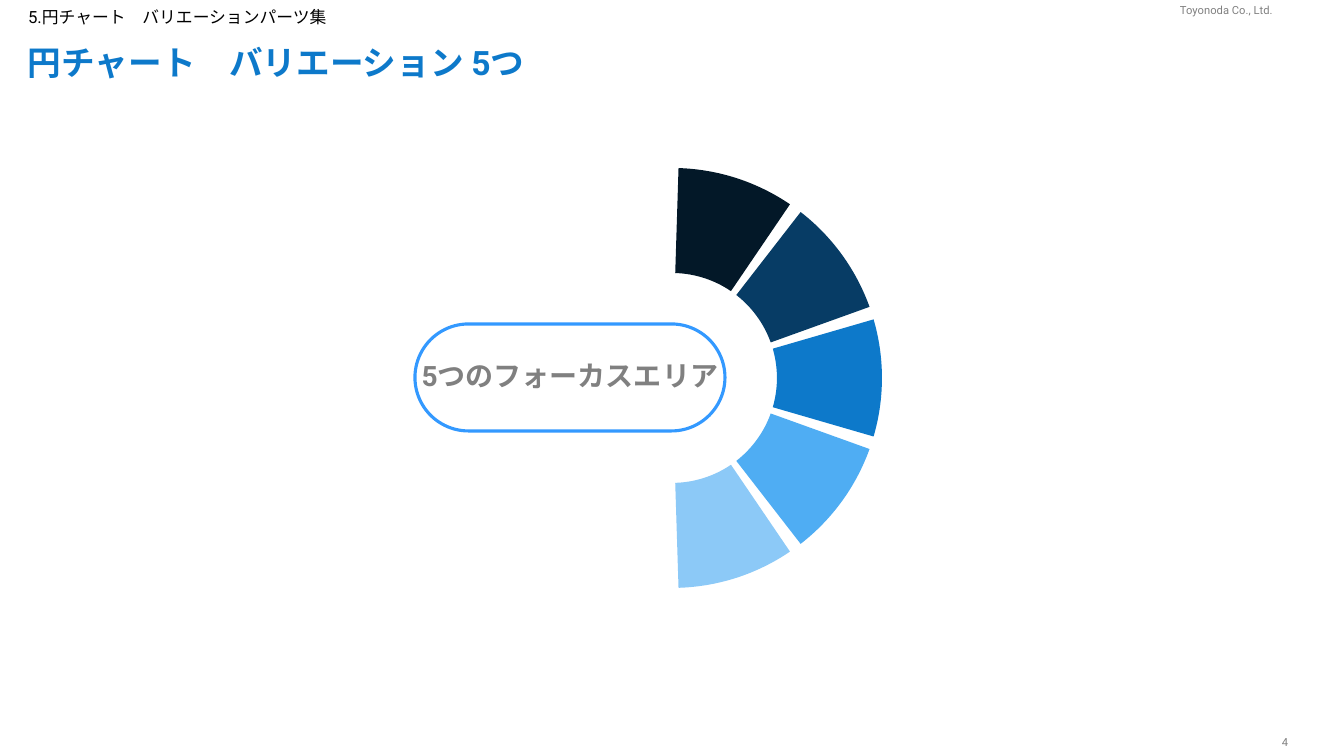
from dataclasses import dataclass

from pptx import Presentation
from pptx.chart.data import CategoryChartData
from pptx.chart.point import Point
from pptx.dml.color import RGBColor as RGB
from pptx.enum.chart import XL_CHART_TYPE as CHART
from pptx.enum.shapes import MSO_SHAPE as SHAPE
from pptx.enum.text import MSO_ANCHOR as ANCHOR, PP_ALIGN as ALIGN
from pptx.oxml import parse_xml
from pptx.oxml.ns import nsdecls
from pptx.util import Pt

EMU_PER_PX = 12192000 / 1344


@dataclass(frozen=True)
class Theme:
    """Colours, font and type sizes of the slide."""
    font: str = "Roboto"
    black: str = "000000"
    white: str = "FFFFFF"
    grey: str = "808080"
    accent: str = "0D79CA"
    outline: str = "3399FF"
    slices: tuple = ("031828", "073C65", "0D79CA", "4FADF3", "8CC9F7")
    title: int = 24
    focus: int = 20
    section: int = 12
    chart: int = 10
    small: int = 8


THEME = Theme()


def px(*lengths):
    """Turn pixel lengths into EMU."""
    return [round(n * EMU_PER_PX) for n in lengths]


def set_text(sp, text, size, color, bold=False, align=ALIGN.LEFT,
             anchor=ANCHOR.MIDDLE, pad=0, wrap=True, spacing=None):
    """Write one styled paragraph into a shape."""
    tf = sp.text_frame
    tf.text = text
    tf.word_wrap = wrap
    tf.vertical_anchor = anchor
    tf.margin_left = tf.margin_right = 0
    tf.margin_top = tf.margin_bottom = px(pad)[0]
    p = tf.paragraphs[0]
    p.alignment = align
    p.line_spacing = spacing
    font = p.runs[0].font
    font.name, font.size, font.bold = THEME.font, Pt(size), bold
    font.color.rgb = RGB.from_string(color)


def add_text(s, box, text, size, color, **style):
    """Add a text box."""
    set_text(s.shapes.add_textbox(*px(*box)), text, size, color, **style)


def add_pill(s, box, text):
    """Add the outlined pill that names the focus areas."""
    sp = s.shapes.add_shape(SHAPE.ROUNDED_RECTANGLE, *px(*box))
    sp.adjustments[0] = 0.5
    sp.shadow.inherit = False
    sp.fill.solid()
    sp.fill.fore_color.rgb = RGB.from_string(THEME.white)
    sp.line.color.rgb = RGB.from_string(THEME.outline)
    sp.line.width = Pt(2.25)
    set_text(sp, text, THEME.focus, THEME.grey, bold=True,
             align=ALIGN.CENTER, pad=5, wrap=False, spacing=0.9)


def set_plot_square(chart, width, height, side):
    """Centre a square plot area in the chart frame."""
    w, h = side / width, side / height
    area = chart._chartSpace.chart.plotArea
    for old in area.xpath("c:layout"):
        area.remove(old)
    area.insert(0, parse_xml(
        f'<c:layout {nsdecls("c")}><c:manualLayout>'
        '<c:layoutTarget val="inner"/><c:xMode val="edge"/><c:yMode val="edge"/>'
        f'<c:x val="{(1 - w) / 2}"/><c:y val="{(1 - h) / 2}"/>'
        f'<c:w val="{w}"/><c:h val="{h}"/></c:manualLayout></c:layout>'))


def add_half_ring(s, box, side):
    """Add a doughnut whose right half shows the coloured slices."""
    count = len(THEME.slices)
    half = [0.5] + [9, 1] * (count - 1) + [9, 0.5]
    data = CategoryChartData()
    data.categories = ["1", "2", "3", "4"]
    data.add_series("Series 1", half * 2)
    chart = s.shapes.add_chart(CHART.DOUGHNUT, *px(*box), data).chart
    chart.has_title = chart.has_legend = False
    chart.font.name, chart.font.size = THEME.font, Pt(THEME.chart)
    chart.font.color.rgb = RGB.from_string(THEME.black)
    set_plot_square(chart, box[2], box[3], side)
    plot = chart.plots[0]
    plot.vary_by_categories = True
    for hole in chart._chartSpace.xpath(".//c:holeSize"):
        hole.set("val", "25")
    ser = plot.series[0]._element
    colors = dict(zip(range(1, 2 * count, 2), THEME.slices))
    for i in range(2 * len(half)):
        fmt = Point(ser, i).format
        fmt.line.fill.background()
        if i in colors:
            fmt.fill.solid()
            fmt.fill.fore_color.rgb = RGB.from_string(colors[i])
        else:
            fmt.fill.background()


def main():
    """Build and save the slide."""
    prs = Presentation()
    prs.slide_width, prs.slide_height = px(1344, 756)
    s = prs.slides.add_slide(prs.slide_layouts[6])
    add_text(s, (1180, 4, 94, 13), "Toyonoda Co., Ltd.", THEME.small,
             THEME.grey, wrap=False)
    add_text(s, (1263, 735, 44, 13), "4", THEME.small, THEME.grey,
             align=ALIGN.CENTER, anchor=ANCHOR.TOP)
    add_text(s, (28, 35, 1278, 59), "円チャート　バリエーション 5つ", THEME.title,
             THEME.accent, bold=True, pad=5, spacing=0.9)
    add_text(s, (28, 4, 643, 28), "5.円チャート　バリエーションパーツ集", THEME.section,
             THEME.black, pad=5, spacing=0.9)
    add_half_ring(s, (336, 154, 672, 448), 420)
    add_pill(s, (415, 324, 310, 107), "5つのフォーカスエリア")
    prs.save("out.pptx")


if __name__ == "__main__":
    main()
